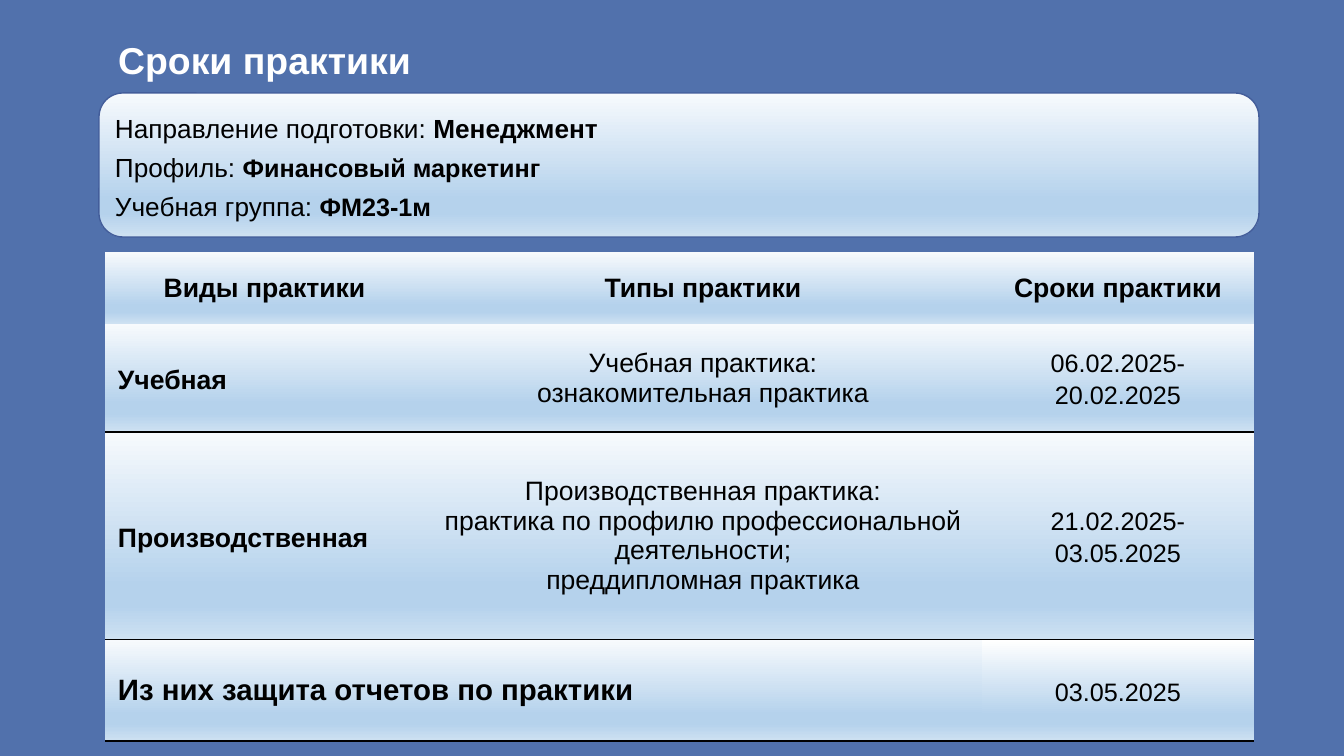
from lxml import etree
from pptx import Presentation
from pptx.dml.color import RGBColor
from pptx.enum.shapes import MSO_SHAPE
from pptx.enum.text import MSO_ANCHOR, PP_ALIGN
from pptx.oxml.ns import qn
from pptx.util import Emu, Pt

ROUNDED = MSO_SHAPE.ROUNDED_RECTANGLE
TOP, MIDDLE = MSO_ANCHOR.TOP, MSO_ANCHOR.MIDDLE
LEFT, CENTER = PP_ALIGN.LEFT, PP_ALIGN.CENTER

EMU_PER_PX = 914400 / 100.8
FONT = "Arial"
BLACK, WHITE = "000000", "FFFFFF"
BACKGROUND, OUTLINE = "5171AC", "435D9A"
PALE = "F7FAFD"
PLAIN_TABLE = "{2D5ABB26-0587-4C30-8999-92F81FD0307C}"
WIDE_MARGINS = (13, 13, 13, 13)
NARROW_MARGINS = (10, 0, 10, 0)


def px(length):
    return Emu(round(length * EMU_PER_PX))


def color(value):
    return RGBColor.from_string(value)


def set_attributes(target, values):
    for name, value in values.items():
        setattr(target, name, value)


def margins(sides):
    names = ("margin_left", "margin_top", "margin_right", "margin_bottom")
    return {name: px(side) for name, side in zip(names, sides)}


# Fills and borders
def gradient(first):
    """Vertical gradient that starts with the given colour."""
    fill = etree.Element(qn("a:gradFill"), rotWithShape="1")
    stops = etree.SubElement(fill, qn("a:gsLst"))
    for position, value in ((0, first), (74, "B5D2EC"), (83, "B5D2EC"), (100, "CEE1F2")):
        stop = etree.SubElement(stops, qn("a:gs"), pos=str(position * 1000))
        etree.SubElement(stop, qn("a:srgbClr"), val=value)
    etree.SubElement(fill, qn("a:lin"), ang="5400000", scaled="0")
    return fill


def add_bottom_border(cell):
    line = etree.SubElement(cell._tc.get_or_add_tcPr(), qn("a:lnB"), w=str(Pt(1)))
    fill = etree.SubElement(line, qn("a:solidFill"))
    etree.SubElement(fill, qn("a:srgbClr"), val=BLACK)


# Text
def write(frame, lines, align=LEFT, spacing=1.0, value=BLACK):
    """Each line is a list of runs: (text, size, bold)."""
    for index, runs in enumerate(lines):
        paragraph = frame.paragraphs[0] if index == 0 else frame.add_paragraph()
        set_attributes(paragraph, {"alignment": align, "line_spacing": spacing})
        for text, size, bold in runs:
            run = paragraph.add_run()
            run.text = text
            set_attributes(run.font, {"name": FONT, "size": Pt(size), "bold": bold})
            run.font.color.rgb = color(value)


def add_text(slide, box, lines, sides, anchor, value=BLACK):
    frame = slide.shapes.add_textbox(*map(px, box)).text_frame
    set_attributes(frame, {"word_wrap": True, "vertical_anchor": anchor, **margins(sides)})
    write(frame, lines, spacing=1.25, value=value)


# Panel behind the programme details
def add_panel(slide, box):
    panel = slide.shapes.add_shape(ROUNDED, *map(px, box))
    panel.shadow.inherit = False
    panel.fill.background()
    properties = panel._element.spPr
    properties.replace(properties.find(qn("a:noFill")), gradient(PALE))
    panel.line.color.rgb = color(OUTLINE)
    panel.line.width = Pt(1)


# Tables
def fill_cell(cell, lines, align=LEFT, spacing=1.0, sides=WIDE_MARGINS,
              border=True, first=PALE):
    set_attributes(cell, {"vertical_anchor": MIDDLE, **margins(sides)})
    write(cell.text_frame, lines, align, spacing)
    if border:
        add_bottom_border(cell)
    cell._tc.get_or_add_tcPr().append(gradient(first))


def add_table(slide, left, top, widths, heights):
    box = (left, top, sum(widths), sum(heights))
    table = slide.shapes.add_table(len(heights), len(widths), *map(px, box)).table
    set_attributes(table, {"first_row": False, "horz_banding": False})
    table._tbl.tblPr.find(qn("a:tableStyleId")).text = PLAIN_TABLE
    for column, width in zip(table.columns, widths):
        column.width = px(width)
    for row, height in zip(table.rows, heights):
        row.height = px(height)
    return table


def add_schedule(slide):
    table = add_table(slide, 105, 252, (319, 558, 272), (72, 108, 208))
    for column, heading in enumerate(("Виды практики", "Типы практики", "Сроки практики")):
        fill_cell(table.cell(0, column), [[(heading, 19, True)]], CENTER, border=False)
    practices = (
        ("Учебная", ("Учебная практика:", "ознакомительная практика"),
         "06.02.2025-20.02.2025"),
        ("Производственная",
         ("Производственная практика:",
          "практика по профилю профессиональной деятельности;",
          "преддипломная практика"),
         "21.02.2025-03.05.2025"),
    )
    for row, (kind, types, dates) in enumerate(practices, 1):
        fill_cell(table.cell(row, 0), [[(kind, 19, True)]], spacing=1.14)
        fill_cell(table.cell(row, 1), [[(text, 19, False)] for text in types],
                  CENTER, sides=NARROW_MARGINS)
        fill_cell(table.cell(row, 2), [[(dates, 18, False)]], CENTER, 1.14)


def add_defence(slide):
    table = add_table(slide, 105, 640, (877, 272), (101,))
    fill_cell(table.cell(0, 0), [[("Из них защита отчетов по практики", 21, True)]])
    fill_cell(table.cell(0, 1), [[("03.05.2025", 18, False)]], CENTER, 1.14,
              NARROW_MARGINS, first=WHITE)


def main():
    presentation = Presentation()
    set_attributes(presentation, {"slide_width": px(1344), "slide_height": px(756)})
    slide = presentation.slides.add_slide(presentation.slide_layouts[6])
    slide.background.fill.solid()
    slide.background.fill.fore_color.rgb = color(BACKGROUND)

    # Title and programme details
    add_panel(slide, (99, 93, 1160, 144))
    add_text(slide, (105, 9, 1132, 90), [[("Сроки практики", 26.7, True)]],
             WIDE_MARGINS, MIDDLE, WHITE)
    details = (
        ("Направление подготовки: ", "Менеджмент", 18.7),
        ("Профиль: ", "Финансовый маркетинг", 18),
        ("Учебная группа: ", "ФМ23-1м", 18),
    )
    add_text(slide, (105, 99, 1293, 129),
             [[(label, 18.7, False), (text, size, True)] for label, text, size in details],
             (10, 5, 10, 5), TOP)

    # Practice dates
    add_schedule(slide)
    add_defence(slide)
    presentation.save("out.pptx")


if __name__ == "__main__":
    main()
